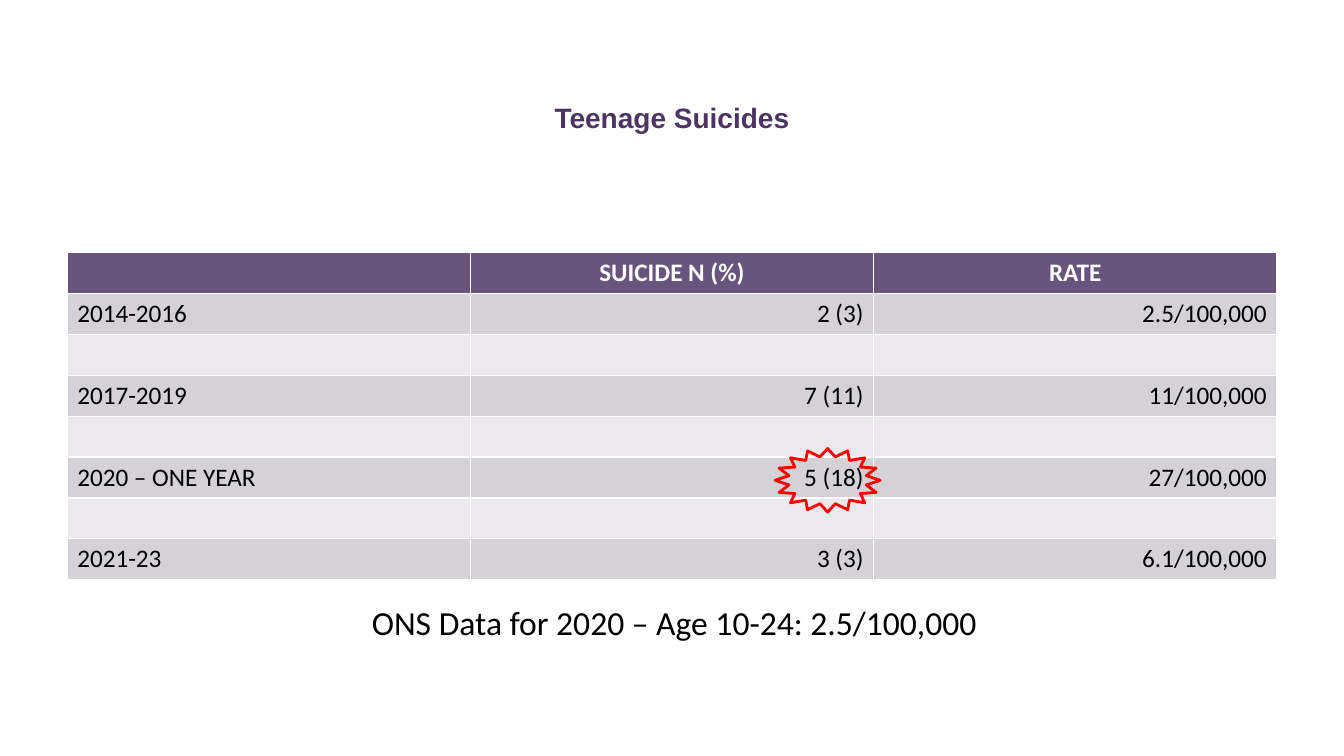
from dataclasses import dataclass

from pptx import Presentation
from pptx.dml.color import RGBColor
from pptx.enum.shapes import MSO_SHAPE
from pptx.enum.text import MSO_ANCHOR, PP_ALIGN
from pptx.util import Pt

LEFT, CENTER, RIGHT = PP_ALIGN.LEFT, PP_ALIGN.CENTER, PP_ALIGN.RIGHT
MIDDLE = MSO_ANCHOR.MIDDLE
STAR = MSO_SHAPE.STAR_16_POINT
TITLE_ONLY = 5


@dataclass(frozen=True)
class Theme:
    heading_font: str = "Arial"
    body_font: str = "Calibri"
    title_color: str = "4E3463"
    header_fill: str = "68547C"
    period_fill: str = "D4D1D7"
    gap_fill: str = "EBE9EC"
    header_text: str = "FFFFFF"
    body_text: str = "000000"
    highlight: str = "FF0000"
    title_size: int = 20
    table_size: int = 18
    note_size: int = 24


THEME = Theme()
HEADINGS = ("", "SUICIDE N (%)", "RATE")
PERIODS = (
    ("2014-2016", "2 (3)", "2.5/100,000"),
    ("2017-2019", "7 (11)", "11/100,000"),
    ("2020 – ONE YEAR", "5 (18)", "27/100,000"),
    ("2021-23", "3 (3)", "6.1/100,000"),
)


def write(frame, text, font, size, color, align, bold=False):
    frame.text = text
    paragraph = frame.paragraphs[0]
    paragraph.alignment = align
    paragraph.font.size = Pt(size)
    for run in paragraph.runs:
        run.font.name = font
        run.font.size = Pt(size)
        run.font.bold = bold
        run.font.color.rgb = RGBColor.from_string(color)


def place_title(slide, text, left, top, width, height):
    title = slide.shapes.title
    title.left, title.top = Pt(left), Pt(top)
    title.width, title.height = Pt(width), Pt(height)
    title.text_frame.vertical_anchor = MIDDLE
    write(title.text_frame, text, THEME.heading_font, THEME.title_size,
          THEME.title_color, CENTER, bold=True)


def fill_row(table, row, texts, fill, color, aligns, bold=False):
    for column, (text, align) in enumerate(zip(texts, aligns)):
        cell = table.cell(row, column)
        cell.fill.solid()
        cell.fill.fore_color.rgb = RGBColor.from_string(fill)
        write(cell.text_frame, text, THEME.body_font, THEME.table_size,
              color, align, bold)


def add_rates_table(slide, left, top, width, row_height):
    row_count = 2 * len(PERIODS)
    table = slide.shapes.add_table(
        row_count, len(HEADINGS), Pt(left), Pt(top), Pt(width),
        Pt(row_height * row_count)).table
    table.horz_banding = False
    fill_row(table, 0, HEADINGS, THEME.header_fill, THEME.header_text,
             (CENTER,) * len(HEADINGS), bold=True)
    body_aligns = (LEFT, RIGHT, RIGHT)
    for index, period in enumerate(PERIODS):
        fill_row(table, 2 * index + 1, period, THEME.period_fill,
                 THEME.body_text, body_aligns)
    for row in range(2, row_count, 2):
        fill_row(table, row, ("",) * len(HEADINGS), THEME.gap_fill,
                 THEME.body_text, body_aligns)


def add_highlight(slide, left, top, width, height):
    star = slide.shapes.add_shape(STAR, Pt(left), Pt(top), Pt(width), Pt(height))
    star.shadow.inherit = False
    star.fill.background()
    star.line.color.rgb = RGBColor.from_string(THEME.highlight)
    star.line.width = Pt(2)


def add_note(slide, text, left, top, width, height):
    note = slide.shapes.add_textbox(Pt(left), Pt(top), Pt(width), Pt(height))
    note.text_frame.word_wrap = True
    write(note.text_frame, text, THEME.body_font, THEME.note_size,
          THEME.body_text, CENTER)


def main():
    presentation = Presentation()
    presentation.slide_width, presentation.slide_height = Pt(960), Pt(540)
    slide = presentation.slides.add_slide(presentation.slide_layouts[TITLE_ONLY])
    place_title(slide, "Teenage Suicides", 52.5, 39, 855, 90)
    add_rates_table(slide, 48, 180.5, 864, 29.2)
    add_highlight(slide, 553.7, 320.4, 75, 45.4)
    add_note(slide, "ONS Data for 2020 – Age 10-24: 2.5/100,000", 157.7, 426.2, 648, 36)
    presentation.save("out.pptx")


if __name__ == "__main__":
    main()
